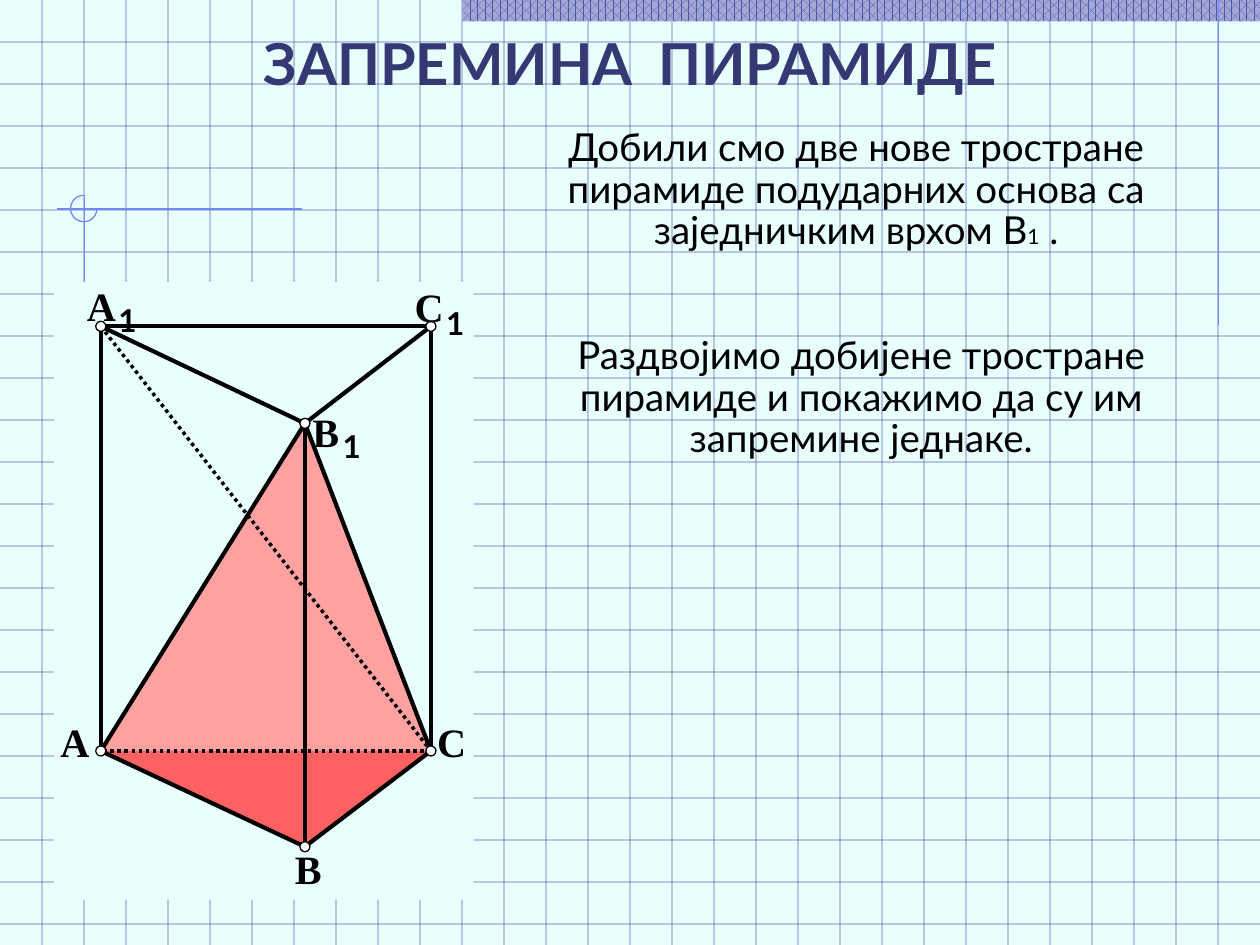
from lxml.etree import SubElement
from pptx import Presentation
from pptx.dml.color import RGBColor
from pptx.enum.dml import MSO_LINE, MSO_PATTERN
from pptx.enum.shapes import MSO_CONNECTOR, MSO_SHAPE
from pptx.enum.text import MSO_ANCHOR, MSO_AUTO_SIZE, PP_ALIGN
from pptx.oxml.ns import qn
from pptx.util import Inches, Pt

PAPER = RGBColor(0xE9, 0xFF, 0xFE)
GRID = RGBColor(0x4F, 0x56, 0xAD)
BAND = RGBColor(0xA3, 0xA7, 0xD5)
ACCENT = RGBColor(0x6F, 0x89, 0xF7)
TITLE = RGBColor(0x35, 0x39, 0x73)
INK = RGBColor(0x01, 0x01, 0x01)
BLACK = RGBColor(0, 0, 0)
WHITE = RGBColor(0xFF, 0xFF, 0xFF)
SIDE = RGBColor(0xFD, 0xA1, 0xA1)
BASE = RGBColor(0xFD, 0x61, 0x61)

presentation = Presentation()
presentation.slide_width = Inches(10)
presentation.slide_height = Inches(7.5)
slide = presentation.slides.add_slide(presentation.slide_layouts[3])
slide.background.fill.solid()
slide.background.fill.fore_color.rgb = PAPER
shapes = slide.shapes


def add_line(start, end, color, width):
    line = shapes.add_connector(MSO_CONNECTOR.STRAIGHT,
                                *(Inches(value) for value in (*start, *end)))
    line.line.color.rgb = color
    line.line.width = Pt(width)
    SubElement(line.element.spPr, qn("a:effectLst"))
    return line


def add_run(paragraph, text, size, color=BLACK, bold=False, font="Lato"):
    run = paragraph.add_run()
    run.text = text
    run.font.size = Pt(size)
    run.font.name = font
    run.font.bold = bold
    run.font.color.rgb = color
    return run


# Squared paper: three squares to the inch, half transparent lines
rows = [((0, i / 3), (10, i / 3)) for i in range(1, 23)]
columns = [((i / 3, 0), (i / 3, 7.5)) for i in range(1, 30)]
for start, end in rows + columns:
    grid_line = add_line(start, end, GRID, 0.75)
    grid_color = grid_line.element.spPr.find(".//" + qn("a:srgbClr"))
    SubElement(grid_color, qn("a:alpha")).set("val", "50000")

# Band and corner ornaments
band = shapes.add_shape(MSO_SHAPE.RECTANGLE, Inches(3.67), 0, Inches(6.33), Inches(0.17))
band.shadow.inherit = False
band.fill.patterned()
band.fill.pattern = MSO_PATTERN.PERCENT_60
band.fill.fore_color.rgb = GRID
band.fill.back_color.rgb = BAND
band.line.fill.background()

add_line((9.67, 0), (9.67, 2.58), ACCENT, 0.75)
add_line((2.4, 1.66), (0.45, 1.66), ACCENT, 0.75)
add_line((0.67, 1.55), (0.67, 4.09), ACCENT, 0.75)

arc = shapes.add_shape(MSO_SHAPE.ARC, Inches(0.56), Inches(1.55), Inches(0.21), Inches(0.21))
arc.shadow.inherit = False
arc.adjustments[0] = 0
arc.adjustments[1] = 162  # 270 degrees
arc.fill.background()
arc.line.color.rgb = ACCENT
arc.line.width = Pt(0.75)

# Title and the two explanations
title, first_text, second_text = list(slide.placeholders)
for placeholder, box in (
    (title, (0.42, 0.17, 9.17, 0.65)),
    (first_text, (3.94, 1.02, 5.71, 1.08)),
    (second_text, (4.08, 2.67, 5.51, 0.93)),
):
    shapes.element.append(placeholder.element)  # in front of the grid
    placeholder.left, placeholder.top, placeholder.width, placeholder.height = map(Inches, box)
    placeholder.text_frame.auto_size = MSO_AUTO_SIZE.NONE
    placeholder.text_frame.word_wrap = True
    placeholder.text_frame.paragraphs[0].alignment = PP_ALIGN.CENTER

title.text_frame.vertical_anchor = MSO_ANCHOR.MIDDLE
heading = title.text_frame.paragraphs[0]
add_run(heading, "ЗАПРЕМИНА", 33, TITLE, True)
word_gap = add_run(heading, " ", 33, TITLE, True)
word_gap.font._element.set("spc", "640")
add_run(heading, "ПИРАМИДЕ", 33, TITLE, True)

for placeholder, runs in (
    (first_text, [
        ("Добили смо две нове тростране пирамиде подударних основа са "
         "заједничким врхом В", 22), ("1", 12), (" .", 22)]),
    (second_text, [
        ("Раздвојимо добијене тростране пирамиде и покажимо да су им "
         "запремине једнаке.", 22)]),
):
    frame = placeholder.text_frame
    frame.vertical_anchor = MSO_ANCHOR.TOP
    frame.margin_left = frame.margin_right = frame.margin_top = frame.margin_bottom = 0
    paragraph = frame.paragraphs[0]
    paragraph.line_spacing = 0.9
    paragraph.space_before = Pt(0)
    properties = paragraph._p.get_or_add_pPr()
    properties.set("marL", "0")
    properties.set("indent", "0")
    SubElement(properties, qn("a:buNone"))
    for text, size in runs:
        add_run(paragraph, text, size)

# Prism with the inscribed pyramid
panel = shapes.add_shape(MSO_SHAPE.RECTANGLE, Inches(0.43), Inches(2.24),
                         Inches(3.33), Inches(4.9))
panel.shadow.inherit = False
panel.fill.solid()
panel.fill.fore_color.rgb = PAPER
panel.line.fill.background()

vertices = {
    "A": (0.8, 5.96), "B": (2.42, 6.72), "C": (3.42, 5.96),
    "A1": (0.8, 2.59), "B1": (2.42, 3.36), "C1": (3.42, 2.59),
}

for corners, color in (("B B1 A", SIDE), ("B1 C B", SIDE), ("C B A", BASE)):
    points = [tuple(map(Inches, vertices[name])) for name in corners.split()]
    builder = shapes.build_freeform(*points[0])
    builder.add_line_segments(points[1:], close=True)
    face = builder.convert_to_shape()
    face.shadow.inherit = False
    face.fill.solid()
    face.fill.fore_color.rgb = color
    face.line.fill.background()

for start, end in (("C", "A"), ("A1", "C")):
    hidden_edge = add_line(vertices[start], vertices[end], INK, 0)
    hidden_edge.line.dash_style = MSO_LINE.ROUND_DOT

for edge in ("A B", "B C", "C1 A1", "B1 C1", "A1 B1", "A B1", "B1 C", "A1 A", "B1 B", "C1 C"):
    start, end = edge.split()
    add_line(vertices[start], vertices[end], INK, 2.38)

for x, y in vertices.values():
    dot = shapes.add_shape(MSO_SHAPE.OVAL, Inches(x - 0.04), Inches(y - 0.04),
                           Inches(0.08), Inches(0.08))
    dot.shadow.inherit = False
    dot.fill.solid()
    dot.fill.fore_color.rgb = WHITE
    dot.line.color.rgb = INK
    dot.line.width = Pt(0)

LETTER = (0.35, 0.44, 23, "Times New Roman")
INDEX = (0.25, 0.36, 18, "Lato")
for text, left, top, (width, height, size, font) in (
    ("A", 0.48, 5.69, LETTER), ("B", 2.34, 6.7, LETTER), ("C", 3.47, 5.69, LETTER),
    ("C", 3.29, 2.24, LETTER), ("1", 3.54, 2.41, INDEX),
    ("B", 2.48, 3.23, LETTER), ("1", 2.72, 3.39, INDEX),
    ("A", 0.69, 2.23, LETTER), ("1", 0.94, 2.39, INDEX),
):
    label = shapes.add_textbox(Inches(left), Inches(top), Inches(width), Inches(height))
    frame = label.text_frame
    frame.margin_left = frame.margin_right = frame.margin_top = frame.margin_bottom = 0
    frame.word_wrap = False
    add_run(frame.paragraphs[0], text, size, bold=True, font=font)

presentation.save("out.pptx")
